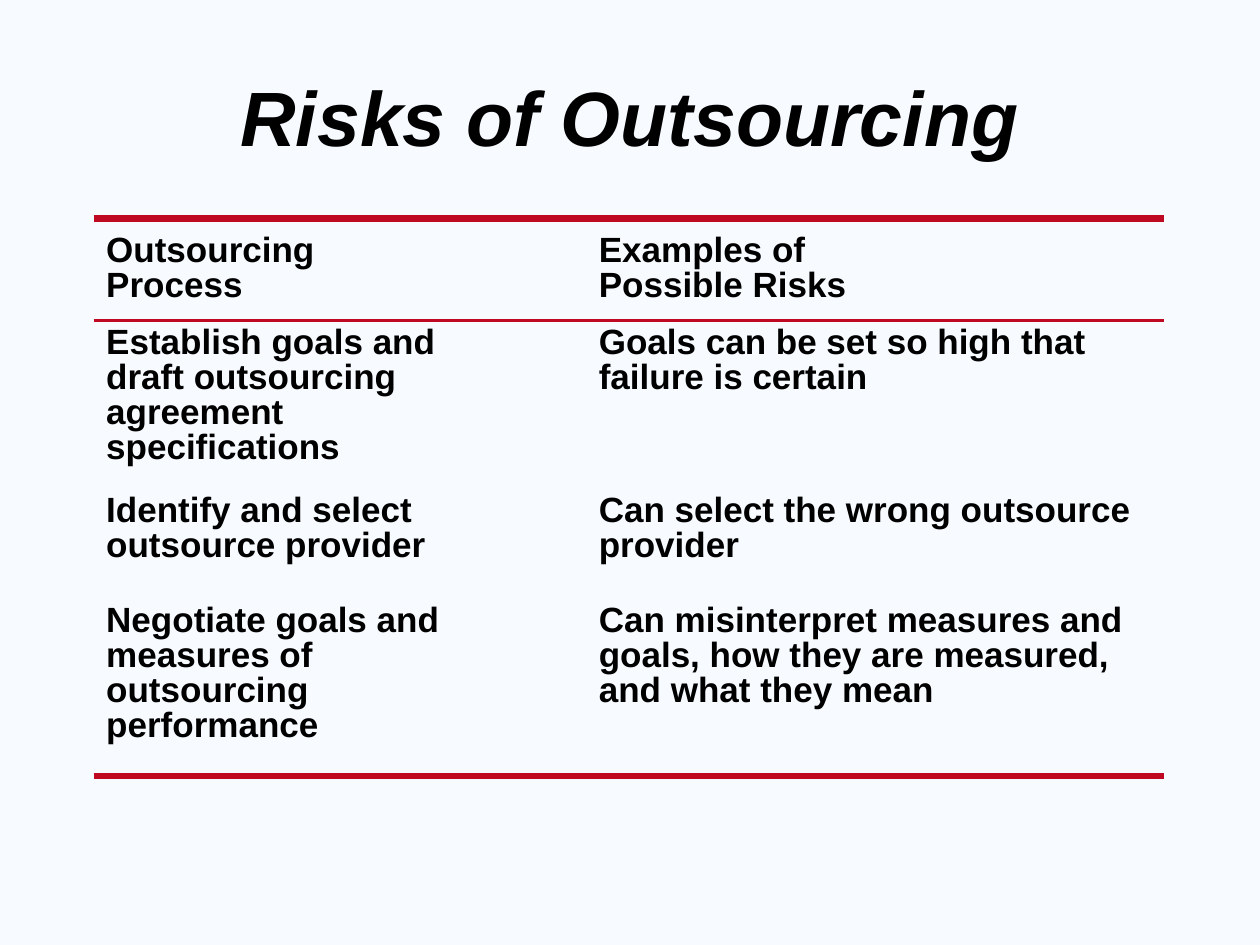
from dataclasses import dataclass

from lxml.etree import SubElement
from pptx import Presentation
from pptx.dml.color import RGBColor as RGB
from pptx.enum.text import MSO_ANCHOR as Anchor, PP_ALIGN as Align
from pptx.oxml.ns import qn
from pptx.util import Pt

# Content
TITLE = "Risks of Outsourcing"
HEADINGS = ("Outsourcing\nProcess", "Examples of\nPossible Risks")
RISKS = [
    ("Establish goals and draft outsourcing agreement specifications",
     "Goals can be set so high that failure is certain"),
    ("Identify and select outsource provider",
     "Can select the wrong outsource provider"),
    ("Negotiate goals and measures of outsourcing performance",
     "Can misinterpret measures and goals, how they are measured, and what they mean"),
]


@dataclass(frozen=True)
class Theme:
    font: str = "Arial"
    background: RGB = RGB(0xF7, 0xFB, 0xFF)
    ink: RGB = RGB(0, 0, 0)
    rule: str = "BF0922"
    title_size: float = 44
    body_size: float = 20
    thick: float = 4.5
    thin: float = 2.25


THEME = Theme()

# Layout in points
TITLE_BOX = (54, 34.5, 612, 71.5)
TABLE_LEFT, TABLE_TOP = 53.5, 124.75
COLUMNS = (248.5, 33, 330)  # process, gap, risks
ROWS = (58.25, 96, 62.75, 101.75)
PROCESS, GAP, RISK = range(len(COLUMNS))


def write(paragraph, text, size, spacing, italic=False):
    paragraph.line_spacing = spacing
    for index, line in enumerate(text.split("\n")):
        if index:
            paragraph.add_line_break()
        run = paragraph.add_run()
        run.text = line
        font = run.font
        font.name, font.size, font.bold, font.italic = THEME.font, Pt(size), True, italic
        font.color.rgb = THEME.ink


def set_borders(cell, top, bottom):
    """Draw horizontal rules of the given widths; zero means no rule."""
    properties = cell._tc.get_or_add_tcPr()
    for side, width in (("L", 0), ("R", 0), ("T", top), ("B", bottom)):
        border = SubElement(properties, qn(f"a:ln{side}"), w=str(int(Pt(width))))
        if width:
            fill = SubElement(border, qn("a:solidFill"))
            SubElement(fill, qn("a:srgbClr"), val=THEME.rule)
        else:
            SubElement(border, qn("a:noFill"))


def add_title(slide):
    frame = slide.shapes.add_textbox(*map(Pt, TITLE_BOX)).text_frame
    frame.word_wrap = True
    frame.vertical_anchor = Anchor.MIDDLE
    heading = frame.paragraphs[0]
    heading.alignment = Align.CENTER
    write(heading, TITLE, THEME.title_size, 0.85, italic=True)


def add_risk_table(slide):
    bounds = (TABLE_LEFT, TABLE_TOP, sum(COLUMNS), sum(ROWS))
    table = slide.shapes.add_table(len(ROWS), len(COLUMNS), *map(Pt, bounds)).table
    table.first_row = table.horz_banding = False
    for column, width in zip(table.columns, COLUMNS):
        column.width = Pt(width)
    for row, height in zip(table.rows, ROWS):
        row.height = Pt(height)

    # Rules above the headings, below them, and under the last row
    rules = [THEME.thick, THEME.thin] + [0] * (len(RISKS) - 1) + [THEME.thick]
    for r, (process, risk) in enumerate([HEADINGS, *RISKS]):
        texts = {PROCESS: process, RISK: risk}
        for c in range(len(COLUMNS)):
            cell = table.cell(r, c)
            set_borders(cell, rules[r], rules[r + 1])
            cell.fill.background()
            cell.vertical_anchor = Anchor.TOP if r else Anchor.MIDDLE
            if c != GAP:
                paragraph = cell.text_frame.paragraphs[0]
                paragraph.space_after = Pt(0.4 * THEME.body_size)
                write(paragraph, texts[c], THEME.body_size, 0.9)


def main():
    deck = Presentation()
    deck.slide_width, deck.slide_height = Pt(720), Pt(540)
    slide = deck.slides.add_slide(deck.slide_layouts[6])
    slide.background.fill.solid()
    slide.background.fill.fore_color.rgb = THEME.background
    add_title(slide)
    add_risk_table(slide)
    deck.save("out.pptx")


if __name__ == "__main__":
    main()
